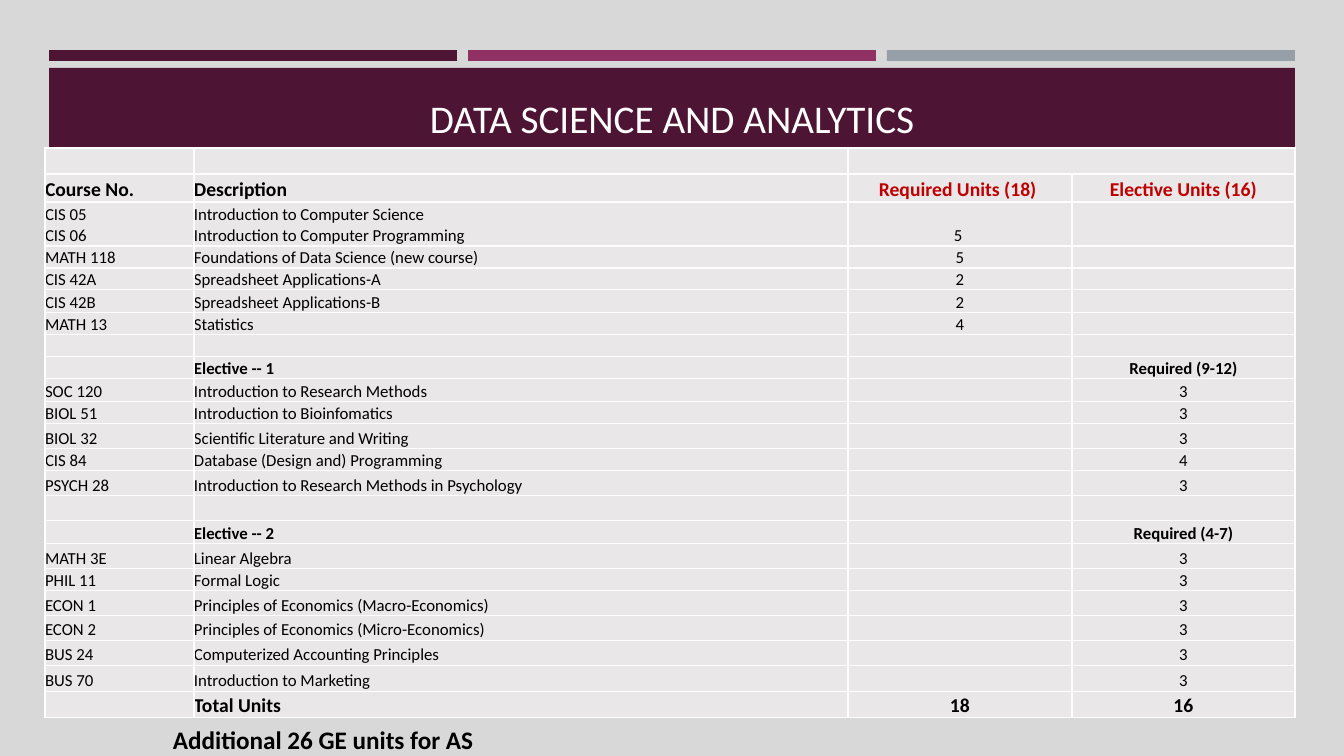
from pptx import Presentation
from pptx.dml.color import RGBColor
from pptx.enum.shapes import MSO_SHAPE as Preset
from pptx.enum.text import MSO_ANCHOR as Anchor, PP_ALIGN as Align
from pptx.oxml import parse_xml
from pptx.oxml.ns import nsdecls
from pptx.util import Emu, Pt

PLUM = RGBColor(0x4D, 0x14, 0x34)
MAGENTA = RGBColor(0x90, 0x31, 0x63)
SLATE = RGBColor(0x96, 0x9F, 0xA7)
BACKDROP = RGBColor(0xD8, 0xD8, 0xD8)
CELL = RGBColor(0xE9, 0xE7, 0xE8)
RED = RGBColor(0xC0, 0x00, 0x00)
BLACK = RGBColor(0x00, 0x00, 0x00)
WHITE = RGBColor(0xFF, 0xFF, 0xFF)

COLUMN_WIDTHS = [149, 654, 224, 223]
BLANK = ("", "", "", "")
CURRICULUM = [
    (26, BLANK),
    (28, ("Course No.", "Description", "Required Units (18) ", "Elective Units (16)")),
    (44, ("CIS 05\nCIS 06",
          "Introduction to Computer Science\nIntroduction to Computer Programming", "5 ", "")),
    (22, ("MATH 118", "Foundations of Data Science (new course)", "5", "")),
    (22, ("CIS 42A", "Spreadsheet Applications-A", "2", "")),
    (23, ("CIS 42B", "Spreadsheet Applications-B", "2", "")),
    (22, ("MATH 13", "Statistics", "4", "")),
    (22, BLANK),
    (22, ("", "Elective -- 1", "", "Required (9-12)")),
    (23, ("SOC 120", "Introduction to Research Methods", "", "3")),
    (22, ("BIOL 51", "Introduction to Bioinfomatics", "", "3")),
    (25, ("BIOL 32", "Scientific Literature and Writing", "", "3")),
    (22, ("CIS 84", "Database (Design and) Programming", "", "4")),
    (25, ("PSYCH 28", "Introduction to Research Methods in Psychology", "", "3")),
    (25, BLANK),
    (23, ("", "Elective -- 2", "", "Required (4-7)")),
    (25, ("MATH 3E", "Linear Algebra", "", "3")),
    (22, ("PHIL 11", "Formal Logic", "", "3")),
    (25, ("ECON 1", "Principles of Economics (Macro-Economics)", "", "3")),
    (25, ("ECON 2", "Principles of Economics (Micro-Economics)", "", "3")),
    (25, ("BUS 24", "Computerized Accounting Principles", "", "3")),
    (26, ("BUS 70", "Introduction to Marketing", "", "3")),
    (26, ("", "Total Units", "18", "16")),
]
HEADER_ROW = 1
TOTAL_ROW = len(CURRICULUM) - 1


def px(length):
    return Emu(round(length * 914400 / 100.8))


def write(frame, text, size=12, bold=False, color=BLACK, align=Align.LEFT, font="Calibri"):
    for index, line in enumerate(text.split("\n")):
        paragraph = frame.add_paragraph() if index else frame.paragraphs[0]
        paragraph.alignment = align
        if line:
            run = paragraph.add_run()
            run.text = line
            run.font.name = font
            run.font.size = Pt(size)
            run.font.bold = bold
            run.font.color.rgb = color
        else:
            paragraph._p.append(parse_xml(f'<a:endParaRPr {nsdecls("a")} sz="{size * 100}"/>'))


class SlideBuilder:
    def __init__(self, slide, border=WHITE, cell_fill=CELL):
        self.slide = slide
        self.border = border
        self.cell_fill = cell_fill

    def background(self, color):
        fill = self.slide.background.fill
        fill.solid()
        fill.fore_color.rgb = color

    def bar(self, left, top, width, height, color):
        bar = self.slide.shapes.add_shape(
            Preset.RECTANGLE, px(left), px(top), px(width), px(height))
        bar.shadow.inherit = False
        bar.fill.solid()
        bar.fill.fore_color.rgb = color
        bar.line.fill.background()

    def label(self, left, top, width, height, text, anchor=Anchor.TOP,
              wrap=True, bottom_inset=5, **style):
        frame = self.slide.shapes.add_textbox(
            px(left), px(top), px(width), px(height)).text_frame
        frame.word_wrap = wrap
        frame.vertical_anchor = anchor
        frame.margin_bottom = px(bottom_inset)
        write(frame, text, **style)

    def cell(self, cell, text, **style):
        cell.margin_left = cell.margin_right = cell.margin_top = cell.margin_bottom = 0
        cell.vertical_anchor = Anchor.BOTTOM
        properties = cell._tc.get_or_add_tcPr()
        for side in ("lnL", "lnR", "lnT", "lnB"):
            properties.append(parse_xml(
                f'<a:{side} {nsdecls("a")} w="12700"><a:solidFill>'
                f'<a:srgbClr val="{self.border}"/></a:solidFill></a:{side}>'))
        cell.fill.solid()
        cell.fill.fore_color.rgb = self.cell_fill
        write(cell.text_frame, text, **style)

    def course_table(self, left, top, widths, rows):
        height = sum(row_height for row_height, _ in rows)
        table = self.slide.shapes.add_table(
            len(rows), len(widths), px(left), px(top), px(sum(widths)), px(height)).table
        table.first_row = table.horz_banding = False
        for column, width in zip(table.columns, widths):
            column.width = px(width)
        for r, (row_height, texts) in enumerate(rows):
            table.rows[r].height = px(row_height)
            major = r in (HEADER_ROW, TOTAL_ROW)
            for c, text in enumerate(texts):
                units = c >= 2
                self.cell(table.cell(r, c), text,
                          size=14 if major else 12,
                          bold=major or not texts[0],
                          color=RED if units and r == HEADER_ROW else BLACK,
                          align=Align.CENTER if units else Align.LEFT)
        table.cell(0, 2).merge(table.cell(0, 3))


def main():
    deck = Presentation()
    deck.slide_width, deck.slide_height = px(1344), px(756)
    page = SlideBuilder(deck.slides.add_slide(deck.slide_layouts[6]))
    page.background(BACKDROP)
    for index, color in enumerate((PLUM, MAGENTA, SLATE)):
        page.bar(49 + 419 * index, 50, 408, 11, color)
    page.bar(49, 68, 1246, 131, PLUM)
    page.label(64, 78, 1216, 111, "DATA SCIENCE AND ANALYTICS", anchor=Anchor.BOTTOM,
               bottom_inset=48, size=28, color=WHITE, align=Align.CENTER)
    page.course_table(45, 148, COLUMN_WIDTHS, CURRICULUM)
    page.label(163, 719, 368, 40, "Additional 26 GE units for AS",
               wrap=False, size=18, bold=True)
    deck.save("out.pptx")


if __name__ == "__main__":
    main()
